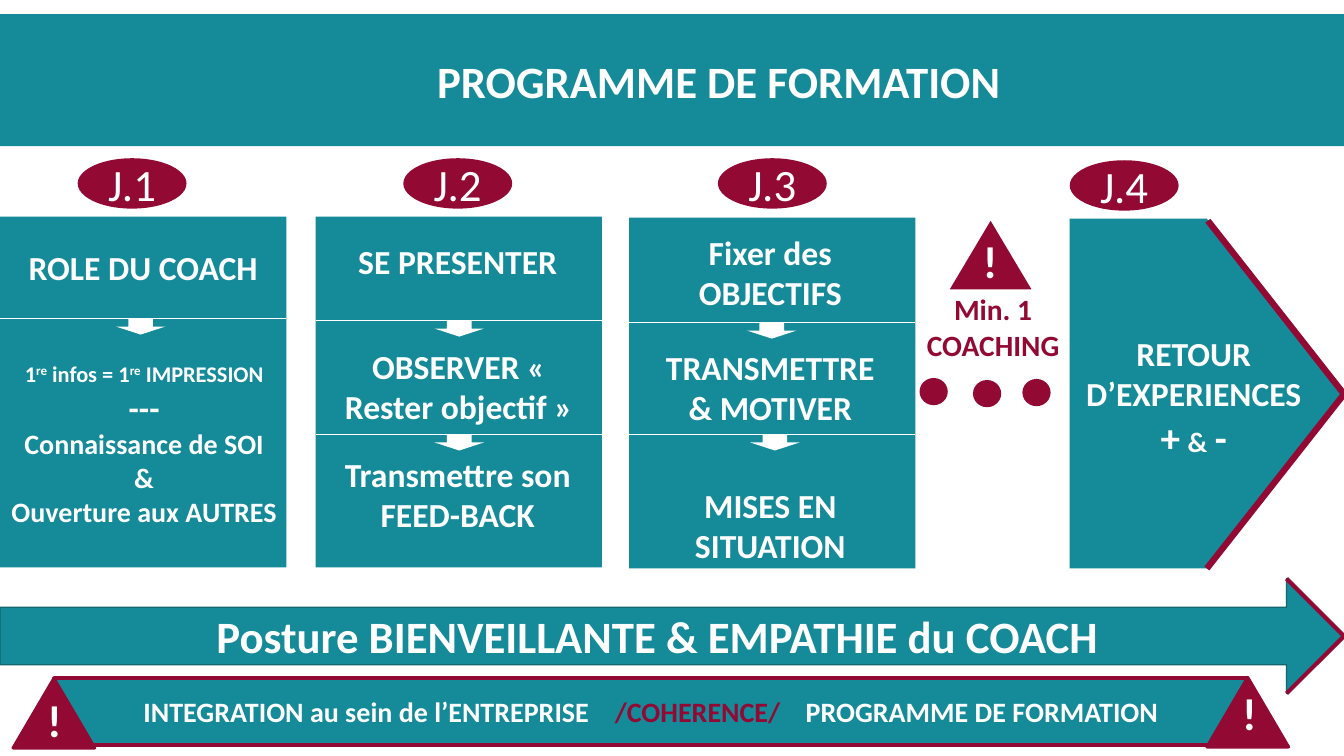
import pptx
import pptx.util
import pptx.dml.color
import pptx.enum.shapes
import pptx.enum.text
import pptx.oxml.ns
import lxml.etree
from dataclasses import dataclass

Inches = pptx.util.Inches
Shape = pptx.enum.shapes.MSO_SHAPE
Anchor = pptx.enum.text.MSO_ANCHOR
Align = pptx.enum.text.PP_ALIGN


@dataclass(frozen=True)
class Theme:
    font: str = "Calibri"
    teal: str = "158A99"
    teal_dark: str = "106671"
    wine: str = "920A34"
    white: str = "FFFFFF"
    display: int = 32
    sign: int = 28
    heading: int = 24
    coaching: int = 21
    body: int = 20
    small: int = 16


theme = Theme()

# Content: a paragraph is a string or a list of (text, style) runs
TITLE = "PROGRAMME DE FORMATION"
POSTURE = "Posture BIENVEILLANTE & EMPATHIE du COACH"
GAP = (" ", {"spacing": 13.5})
INTEGRATION = [[("INTEGRATION au sein de l’ENTREPRISE", {}), GAP,
                ("/COHERENCE/", {"color": theme.wine}), GAP,
                ("PROGRAMME DE FORMATION", {})]]
SMALL = {"size": theme.small}
RAISED = {"size": theme.small, "raised": True}
BODY = {"size": theme.body}
SIGN = {"size": theme.sign}
IMPRESSION = [
    [("1", SMALL), ("re", RAISED), (" infos = 1", SMALL), ("re", RAISED), (" IMPRESSION", SMALL)],
    "---",
    [("Connaissance de SOI", BODY)],
    [("&", BODY)],
    [("Ouverture aux AUTRES", BODY)],
]
EXPERIENCES = ["RETOUR D’EXPERIENCES", [("+", SIGN), (" ", {}), ("&", BODY), (" ", {}), ("-", SIGN)]]
COACHING = ["Min. 1", "COACHING"]

# Each day: label, badge (left, top)
BADGES = [("J.1", 0.77, 1.57), ("J.2", 4, 1.57), ("J.3", 7.12, 1.57), ("J.4", 10.61, 1.59)]

# Each column: left, top, separator heights, arrow lefts, texts (left, top, height, paragraphs)
CARD_WIDTH, CARD_HEIGHT = 2.84, 3.48
COLUMNS = [
    (0, 2.15, [3.16], [1.15], [
        (0, 2.4, 0.5, ["ROLE DU COACH"]),
        (0.01, 3.52, 1.78, IMPRESSION)]),
    (3.13, 2.15, [3.18, 4.31], [4.31, 4.31], [
        (3.12, 2.34, 0.5, ["SE PRESENTER"]),
        (3.13, 3.38, 0.91, ["OBSERVER « Rester objectif »"]),
        (3.12, 4.45, 0.91, ["Transmettre son", "FEED-BACK"])]),
    (6.24, 2.16, [3.2, 4.31], [7.41, 7.44], [
        (6.22, 2.25, 0.91, ["Fixer des", "OBJECTIFS"]),
        (6.22, 3.39, 0.91, ["TRANSMETTRE", "& MOTIVER"]),
        (6.22, 4.76, 0.91, ["MISES EN SITUATION"])]),
]
DOTS = [(9.12, 3.75), (9.65, 3.77), (10.14, 3.76)]

# Each warning: triangle (left, top, height), mark (left, top), outline width
WARNINGS = [((9.42, 2.19, 0.68), (9.65, 2.27), 0),
            ((0.13, 6.73, 0.69), (0.37, 6.82), 2.25),
            ((11.97, 6.72, 0.69), (12.22, 6.75), 2.25)]

# Wine edges along the two arrow heads: points, width
EDGES = [([(11.98, 2.19), (13.33, 3.91), (11.97, 5.64)], 4.5),
         ([(12.76, 5.74), (13.33, 6.31), (12.76, 6.88)], 3)]

deck = pptx.Presentation()
deck.slide_width, deck.slide_height = Inches(13.33), Inches(7.5)
page = deck.slides.add_slide(deck.slide_layouts[5])


def rgb(value):
    return pptx.dml.color.RGBColor.from_string(value)


def write(box, paragraphs, size, color=theme.white, bold=True, align=Align.CENTER, anchor=Anchor.TOP):
    frame = box.text_frame
    frame.word_wrap = True
    frame.auto_size = pptx.enum.text.MSO_AUTO_SIZE.NONE
    frame.vertical_anchor = anchor
    for index, runs in enumerate(paragraphs):
        para = frame.add_paragraph() if index else frame.paragraphs[0]
        para.alignment = align
        for text, style in [(runs, {})] if isinstance(runs, str) else runs:
            span = para.add_run()
            span.text = text
            span.font.name = theme.font
            span.font.bold = bold
            span.font.size = pptx.util.Pt(style.get("size", size))
            span.font.color.rgb = rgb(style.get("color", color))
            properties = span._r.get_or_add_rPr()
            if style.get("raised"):
                properties.set("baseline", "30000")
            if "spacing" in style:
                properties.set("spc", str(int(style["spacing"] * 100)))


def add_shape(kind, left, top, width, height, fill, line=None, weight=0):
    shape = page.shapes.add_shape(kind, Inches(left), Inches(top), Inches(width), Inches(height))
    shape.shadow.inherit = False
    shape.fill.solid()
    shape.fill.fore_color.rgb = rgb(fill)
    if weight:
        shape.line.color.rgb = rgb(line)
        shape.line.width = pptx.util.Pt(weight)
    else:
        shape.line.fill.background()
    return shape


def add_text(left, top, width, height, paragraphs, size=theme.heading, **options):
    box = page.shapes.add_textbox(Inches(left), Inches(top), Inches(width), Inches(height))
    write(box, paragraphs, size, **options)


def add_line(start, end, color, weight):
    line = page.shapes.add_connector(pptx.enum.shapes.MSO_CONNECTOR.STRAIGHT,
                                     *[Inches(value) for value in (*start, *end)])
    line.line.color.rgb = rgb(color)
    line.line.width = pptx.util.Pt(weight)
    lxml.etree.SubElement(line._element.spPr, pptx.oxml.ns.qn("a:effectLst"))


# Integration bar, then the title on its banner
bar = add_shape(Shape.RECTANGLE, 0.54, 6.73, 11.83, 0.66, theme.teal, theme.wine, 3)
write(bar, INTEGRATION, theme.body, anchor=Anchor.MIDDLE)
add_shape(Shape.RECTANGLE, 0, 0.14, 13.33, 1.31, theme.teal)
title = page.shapes.title
title.left, title.top, title.width, title.height = map(Inches, (2.35, 0.47, 9.56, 0.65))
write(title, [TITLE], theme.display, anchor=Anchor.MIDDLE)
page.shapes._spTree.append(title._element)

# Posture arrow and day four
add_shape(Shape.PENTAGON, 10.61, 2.17, 2.72, 3.47, theme.teal)
posture = add_shape(Shape.RIGHT_ARROW, 0, 5.74, 13.33, 1.14, theme.teal, theme.teal_dark, 0.85)
write(posture, [POSTURE], theme.display, anchor=Anchor.MIDDLE)
for points, weight in EDGES:
    for start, end in zip(points, points[1:]):
        add_line(start, end, theme.wine, weight)
add_text(10.42, 3.25, CARD_WIDTH, 1.38, EXPERIENCES)

# Columns for days one to three
for left, top, separators, arrows, texts in COLUMNS:
    add_shape(Shape.RECTANGLE, left, top, CARD_WIDTH, CARD_HEIGHT, theme.teal)
    for height, arrow_left in zip(separators, arrows):
        add_line((left, height), (left + CARD_WIDTH, height), theme.white, 0.75)
        add_shape(Shape.DOWN_ARROW, arrow_left, height, 0.49, 0.16, theme.white)
    for text_left, text_top, text_height, paragraphs in texts:
        add_text(text_left, text_top, CARD_WIDTH, text_height, paragraphs)

# Day badges
for label, left, top in BADGES:
    badge = add_shape(Shape.OVAL, left, top, 1.08, 0.5, theme.wine)
    write(badge, [label], theme.display, bold=False, anchor=Anchor.MIDDLE)

# Coaching between days three and four
for left, top in DOTS:
    add_shape(Shape.OVAL, left, top, 0.28, 0.27, theme.wine)
add_text(9.08, 2.85, 1.54, 0.78, COACHING, theme.coaching, color=theme.wine, anchor=Anchor.MIDDLE)

# Warning triangles
for (left, top, height), (mark_left, mark_top), weight in WARNINGS:
    add_shape(Shape.ISOSCELES_TRIANGLE, left, top, 0.81, height, theme.wine, theme.wine, weight)
    add_text(mark_left, mark_top, 0.32, 0.64, ["!"], theme.display, align=Align.LEFT)

deck.save("out.pptx")
